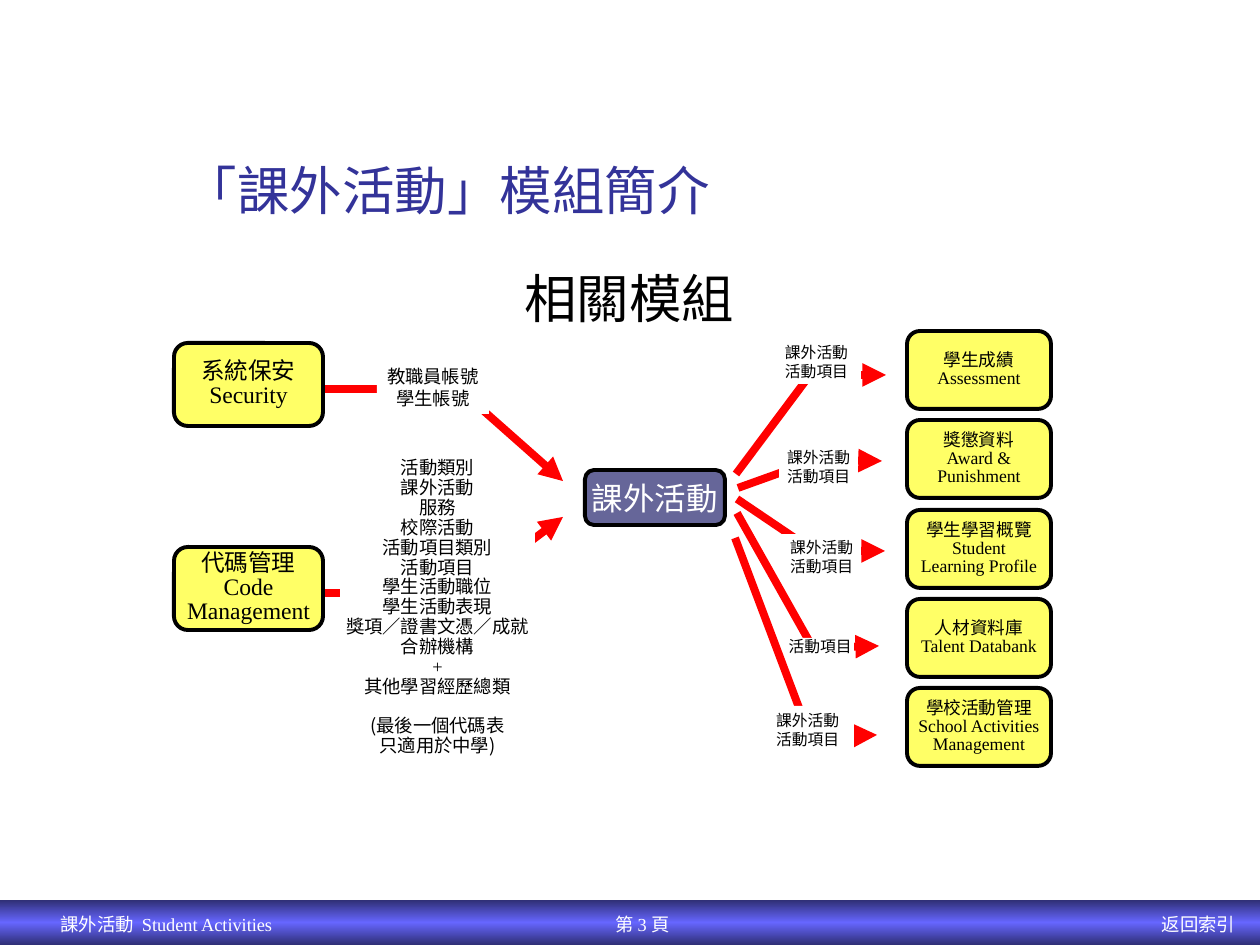
from copy import deepcopy
from dataclasses import dataclass

from pptx import Presentation
from pptx.dml.color import RGBColor
from pptx.enum.shapes import MSO_SHAPE
from pptx.enum.text import MSO_ANCHOR, MSO_AUTO_SIZE, PP_ALIGN
from pptx.oxml.ns import qn
from pptx.util import Emu, Pt

EMU_PER_PX = 914400 / 126
SERIF = "Times New Roman"
SANS = "Noto Sans CJK SC"
DISPLAY = "Cabin"
YELLOW, WHITE, BLACK, RED = "FFFF66", "FFFFFF", "000000", "FF0000"


@dataclass
class Box:
    area: tuple[int, int, int, int]
    lines: tuple[str, ...]
    size: float
    fill: str | None = None
    border: str | None = None
    color: str = BLACK
    spacing: float = 1.0
    side_inset: int = 9
    end_inset: int = 5
    wrap: bool = False
    middle: bool = False
    note: tuple[str, ...] = ()


@dataclass
class Arrow:
    points: tuple[tuple[int, int], ...]


def px(value: int) -> Emu:
    return Emu(round(value * EMU_PER_PX))


def rgb(value: str) -> RGBColor:
    return RGBColor.from_string(value)


def apply(target, values: dict) -> None:
    for name, value in values.items():
        setattr(target, name, value)


def place(shape, area) -> None:
    apply(shape, dict(zip(("left", "top", "width", "height"), map(px, area))))


def write(frame, lines, size, color, font=SERIF, align=PP_ALIGN.CENTER, spacing=1.0):
    paragraphs = []
    for index, text in enumerate(lines):
        para = frame.paragraphs[0] if index == 0 else frame.add_paragraph()
        apply(para, {"alignment": align, "line_spacing": spacing,
                     "space_before": Pt(0), "space_after": Pt(0)})
        span = para.add_run()
        span.text = text
        apply(span.font, {"name": font, "size": Pt(size)})
        span.font.color.rgb = rgb(color)
        paragraphs.append(para)
    return paragraphs


def set_frame(frame, side: int, end: int, wrap: bool, middle: bool) -> None:
    apply(frame, {
        "margin_left": px(side), "margin_right": px(side),
        "margin_top": px(end), "margin_bottom": px(end),
        "auto_size": MSO_AUTO_SIZE.NONE, "word_wrap": wrap,
        "vertical_anchor": MSO_ANCHOR.MIDDLE if middle else MSO_ANCHOR.TOP,
    })


def draw_box(page, box: Box) -> None:
    area = tuple(map(px, box.area))
    if box.fill is None:
        shape = page.shapes.add_textbox(*area)
    else:
        kind = MSO_SHAPE.ROUNDED_RECTANGLE if box.border else MSO_SHAPE.RECTANGLE
        shape = page.shapes.add_shape(kind, *area)
        shape.shadow.inherit = False
        shape.fill.solid()
        shape.fill.fore_color.rgb = rgb(box.fill)
        if box.border:
            shape.line.color.rgb = rgb(box.border)
            shape.line.width = Pt(2.25)
        else:
            shape.line.fill.background()
    frame = shape.text_frame
    set_frame(frame, box.side_inset, box.end_inset, box.wrap, box.middle)
    paragraphs = write(frame, box.lines + box.note, box.size, box.color, spacing=box.spacing)
    notes = paragraphs[len(box.lines):]
    for para in notes:
        para.runs[0].font.name = SANS
    if notes:
        notes[0].space_before = Pt(11.3)


def draw_arrow(page, arrow: Arrow) -> None:
    start, *rest = arrow.points
    builder = page.shapes.build_freeform(*start, scale=EMU_PER_PX)
    builder.add_line_segments(rest, close=False)
    shape = builder.convert_to_shape()
    shape.shadow.inherit = False
    shape.fill.background()
    shape.line.color.rgb = rgb(RED)
    shape.line.width = Pt(4.5)
    line = shape.line._get_or_add_ln()
    line.append(line.makeelement(qn("a:tailEnd"), {"type": "triangle"}))


def draw_footer(page) -> None:
    bar = page.shapes.add_shape(MSO_SHAPE.RECTANGLE, *map(px, (0, 900, 1260, 45)))
    bar.shadow.inherit = False
    bar.line.fill.background()
    bar.fill.gradient()
    bar.fill.gradient_angle = 90
    stops = bar.fill._fill._gradFill.find(qn("a:gsLst"))
    stops.insert(1, deepcopy(stops[0]))
    colors = ("2F2F75", "6666FF", "2F2F75")
    for stop, color, position in zip(bar.fill.gradient_stops, colors, (0, 0.5, 1)):
        stop.color.rgb = rgb(color)
        stop.position = position
    for left, width, text in ((568, 149, "第 3 頁"),
                              (0, 333, "課外活動  Student Activities"),
                              (1137, 123, "返回索引")):
        draw_box(page, Box((left, 908, width, 32), (text,), 10.5,
                           color=WHITE, wrap=True, middle=True))


def source_box(top: int, *lines: str) -> Box:
    return Box((174, top, 149, 83), lines, 13.5, YELLOW, BLACK, spacing=0.85, middle=True)


def target_box(row: int, *lines: str) -> Box:
    return Box((907, 331 + round(89.3 * row), 144, 78), lines, 10.1, YELLOW, BLACK,
               spacing=0.85, side_inset=8, end_inset=4, middle=True)


def flow_label(area, *lines: str, spacing: float = 1.0, end_inset: int = 4) -> Box:
    return Box(area, lines, 9, WHITE, spacing=spacing, side_inset=0,
               end_inset=end_inset, wrap=True)


CODE_TABLES = ("活動類別", "課外活動", "服務", "校際活動", "活動項目類別", "活動項目",
               "學生活動職位", "學生活動表現", "獎項／證書文憑／成就", "合辦機構", "+",
               "其他學習經歷總類")
BOTH = ("課外活動", "活動項目")

DIAGRAM = (
    Arrow(((735, 538), (810, 737), (877, 735))),
    Arrow(((321, 593), (462, 593), (563, 517))),
    source_box(547, "代碼管理", "Code", "Management"),
    Box((340, 454, 195, 310), CODE_TABLES, 10.5, WHITE, spacing=0.9, side_inset=0,
        wrap=True, note=("(最後一個代碼表", "只適用於中學)")),
    Arrow(((312, 389), (459, 389), (563, 481))),
    source_box(343, "系統保安", "Security"),
    Box((377, 360, 112, 54), ("教職員帳號", "學生帳號"), 10.5, WHITE),
    Box((585, 470, 140, 55), ("課外活動",), 18, "666699", BLACK, WHITE, middle=True),
    Arrow(((737, 513), (813, 648), (879, 646))),
    Arrow(((736, 474), (810, 375), (886, 375))),
    Arrow(((737, 499), (814, 551), (885, 551))),
    Arrow(((738, 488), (816, 460), (882, 461))),
    target_box(0, "學生成績", "Assessment"),
    target_box(1, "獎懲資料", "Award &", "Punishment"),
    target_box(2, "學生學習概覽", "Student", "Learning Profile"),
    target_box(3, "人材資料庫", "Talent Databank"),
    target_box(4, "學校活動管理", "School Activities", "Management"),
    flow_label((772, 339, 89, 45), *BOTH),
    flow_label((779, 444, 79, 45), *BOTH),
    flow_label((782, 534, 79, 45), *BOTH),
    flow_label((786, 638, 68, 20), "活動項目", spacing=0.7),
    flow_label((761, 706, 93, 48), *BOTH, end_inset=5),
)


def main() -> None:
    deck = Presentation()
    apply(deck, {"slide_width": px(1260), "slide_height": px(945)})
    page = deck.slides.add_slide(deck.slide_layouts[1])
    draw_footer(page)
    title, body = page.shapes.title, page.placeholders[1]
    place(title, (176, 122, 907, 106))
    place(body, (176, 261, 907, 73))
    for holder in (title, body):
        set_frame(holder.text_frame, 9, 5, True, False)
    properties = body.text_frame.paragraphs[0]._p.get_or_add_pPr()
    apply_indent = {"marL": "0", "indent": "0"}
    for name, value in apply_indent.items():
        properties.set(name, value)
    properties.append(properties.makeelement(qn("a:buNone"), {}))
    write(title.text_frame, ("「課外活動」模組簡介",), 30, "333399", DISPLAY, PP_ALIGN.LEFT, 1.5)
    write(body.text_frame, ("相關模組",), 30, BLACK, DISPLAY)
    for item in DIAGRAM:
        if isinstance(item, Arrow):
            draw_arrow(page, item)
        else:
            draw_box(page, item)
    deck.save("out.pptx")


if __name__ == "__main__":
    main()
